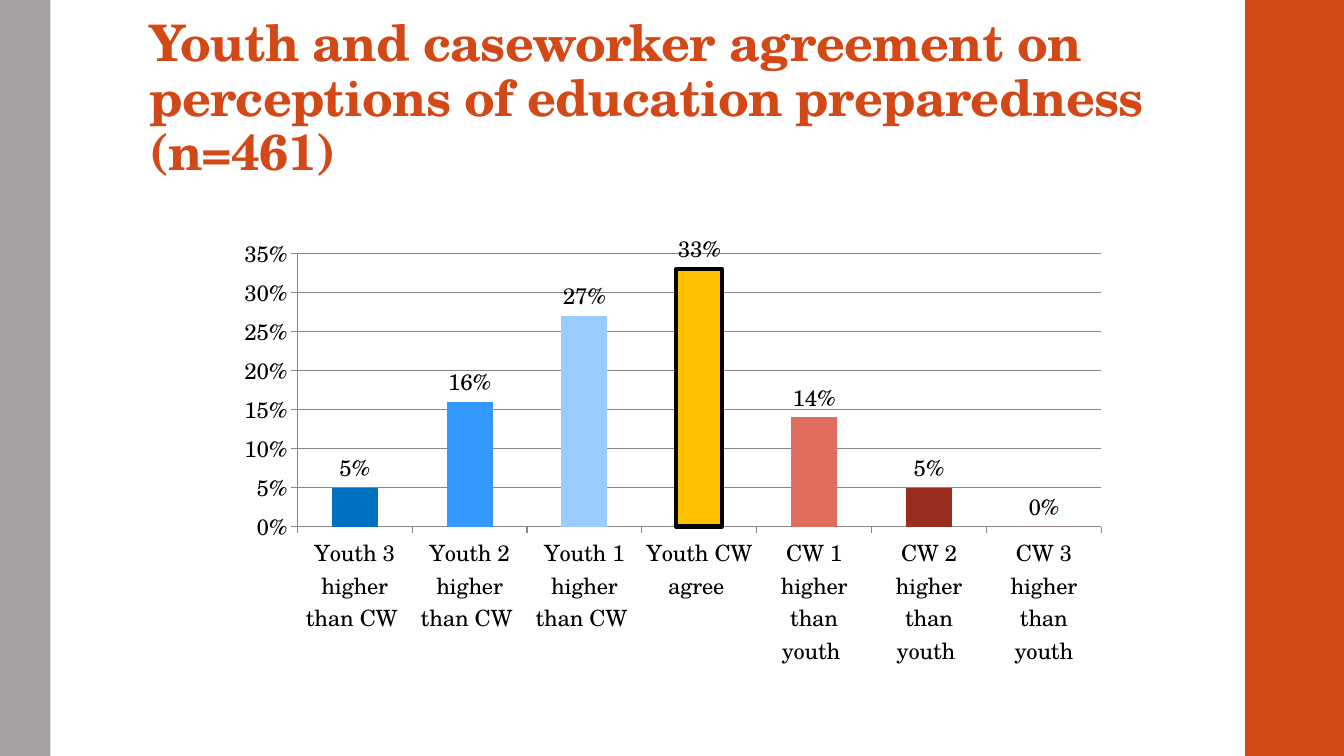
from dataclasses import dataclass

from lxml import etree
from pptx import Presentation
from pptx.chart.data import CategoryChartData
from pptx.dml.color import RGBColor
from pptx.enum.chart import XL_CHART_TYPE, XL_LABEL_POSITION, XL_TICK_MARK
from pptx.enum.shapes import MSO_SHAPE
from pptx.enum.text import MSO_ANCHOR, MSO_AUTO_SIZE, PP_ALIGN
from pptx.oxml import parse_xml
from pptx.oxml.ns import nsdecls
from pptx.util import Inches, Pt

RECTANGLE = MSO_SHAPE.RECTANGLE
COLUMNS = XL_CHART_TYPE.COLUMN_CLUSTERED
OUTSIDE_END = XL_LABEL_POSITION.OUTSIDE_END
TICK_OUTSIDE = XL_TICK_MARK.OUTSIDE
TICK_NONE = XL_TICK_MARK.NONE
BOTTOM = MSO_ANCHOR.BOTTOM
LEFT = PP_ALIGN.LEFT
NO_AUTOFIT = MSO_AUTO_SIZE.NONE


@dataclass(frozen=True)
class Theme:
    """Colours, font and type sizes of the slide."""
    font: str = "TeX Gyre Schola"
    accent: str = "D34817"
    sidebar: str = "A6A1A1"
    text: str = "000000"
    grid: str = "878787"
    title_size: int = 36
    chart_size: int = 16


THEME = Theme()
SLIDE_WIDTH, SLIDE_HEIGHT = 13.33, 7.5
TITLE = "Youth and caseworker agreement on perceptions of education preparedness (n=461)"
AGREE = "Youth CW agree "
AGREEMENT = [
    ("Youth 3 higher than CW ", 0.05, "0070C0"),
    ("Youth 2 higher than CW ", 0.16, "3399FF"),
    ("Youth 1 higher than CW ", 0.27, "99CCFF"),
    (AGREE, 0.33, "FFC000"),
    ("CW 1 higher than youth ", 0.14, "DF6C5D"),
    ("CW 2 higher than youth ", 0.05, "9B2D1F"),
    ("CW 3 higher than youth", 0, THEME.accent),
]
PLOT_AREA = {"x": 0.08, "y": 0.06, "w": 0.9, "h": 0.61}


def rgb(value):
    """Return the colour for a hex value."""
    return RGBColor.from_string(value)


def style_font(font, size, color, bold=False):
    """Apply the theme font with a size and a colour."""
    font.name = THEME.font
    font.size = Pt(size)
    font.bold = bold
    font.color.rgb = rgb(color)


def add_band(slide, left, top, width, height, color):
    """Draw a plain vertical band at the slide edge."""
    band = slide.shapes.add_shape(
        RECTANGLE, Inches(left), Inches(top), Inches(width), Inches(height))
    band.shadow.inherit = False
    band.fill.solid()
    band.fill.fore_color.rgb = rgb(color)
    band.line.fill.background()


def fill_title(slide, left, top, width, height):
    """Place and format the title placeholder."""
    title = slide.shapes.title
    title.left, title.top = Inches(left), Inches(top)
    title.width, title.height = Inches(width), Inches(height)
    frame = title.text_frame
    frame.text = TITLE
    frame.word_wrap = True
    frame.auto_size = NO_AUTOFIT
    frame.vertical_anchor = BOTTOM
    frame.margin_left = frame.margin_right = Inches(0.1)
    frame.margin_top, frame.margin_bottom = Inches(0.03), Inches(0.05)
    paragraph = frame.paragraphs[0]
    paragraph.alignment = LEFT
    paragraph.line_spacing = 0.9
    run = paragraph.runs[0]
    style_font(run.font, THEME.title_size, THEME.accent, bold=True)
    run.font._element.set("spc", "-50")


def fix_plot_area(chart):
    """Set the inner plot area as fractions of the chart box."""
    plot_area = chart._chartSpace.chart.plotArea
    for previous in plot_area.findall("c:layout", plot_area.nsmap):
        plot_area.remove(previous)
    layout = parse_xml(
        f'<c:layout {nsdecls("c")}><c:manualLayout><c:layoutTarget val="inner"/>'
        '<c:xMode val="edge"/><c:yMode val="edge"/></c:manualLayout></c:layout>')
    for side, share in PLOT_AREA.items():
        etree.SubElement(layout[0], f"{{{plot_area.nsmap['c']}}}{side}", val=str(share))
    plot_area.insert(0, layout)


def style_axes(chart):
    """Format the category axis, the value axis and the gridlines."""
    for axis in (chart.category_axis, chart.value_axis):
        axis.major_tick_mark = TICK_OUTSIDE
        axis.minor_tick_mark = TICK_NONE
        axis.format.line.color.rgb = rgb(THEME.grid)
        axis.format.line.width = Pt(0.75)
        style_font(axis.tick_labels.font, THEME.chart_size, THEME.text)
    shares = chart.value_axis
    shares.minimum_scale, shares.maximum_scale, shares.major_unit = 0, 0.35, 0.05
    shares.tick_labels.number_format = "0%"
    shares.tick_labels.number_format_is_linked = False
    shares.has_major_gridlines = True
    shares.major_gridlines.format.line.color.rgb = rgb(THEME.grid)
    shares.major_gridlines.format.line.width = Pt(0.75)


def style_columns(plot):
    """Colour each column, outline the agreement column and label the values."""
    plot.gap_width = 150
    plot.vary_by_categories = False
    series = plot.series[0]
    series.format.fill.solid()
    series.format.fill.fore_color.rgb = rgb(THEME.accent)
    for index, (category, _, color) in enumerate(AGREEMENT):
        column = series.points[index].format
        column.fill.solid()
        column.fill.fore_color.rgb = rgb(color)
        if category == AGREE:
            column.line.color.rgb = rgb(THEME.text)
            column.line.width = Pt(3)
    plot.has_data_labels = True
    labels = plot.data_labels
    labels.show_value = True
    labels.position = OUTSIDE_END
    labels.number_format = "0%"
    labels.number_format_is_linked = False
    style_font(labels.font, THEME.chart_size, THEME.text)


def add_agreement_chart(slide, left, top, width, height):
    """Add the column chart of agreement levels."""
    data = CategoryChartData(number_format="0%")
    data.categories = [category for category, _, _ in AGREEMENT]
    data.add_series("Series 1", [share for _, share, _ in AGREEMENT])
    chart = slide.shapes.add_chart(
        COLUMNS, Inches(left), Inches(top), Inches(width), Inches(height), data).chart
    chart.has_title = False
    chart.has_legend = False
    style_font(chart.font, THEME.chart_size, THEME.text)
    style_axes(chart)
    style_columns(chart.plots[0])
    fix_plot_area(chart)


def main():
    """Build and save the slide."""
    deck = Presentation()
    deck.slide_width, deck.slide_height = Inches(SLIDE_WIDTH), Inches(SLIDE_HEIGHT)
    slide = deck.slides.add_slide(deck.slide_layouts[5])
    add_band(slide, SLIDE_WIDTH - 0.98, 0, 0.98, SLIDE_HEIGHT, THEME.accent)
    add_band(slide, 0, 0, 0.5, SLIDE_HEIGHT, THEME.sidebar)
    fill_title(slide, 1.38, 0.32, 10.6, 1.53)
    add_agreement_chart(slide, 2.24, 2.25, 8.86, 4.44)
    deck.save("out.pptx")


if __name__ == "__main__":
    main()
